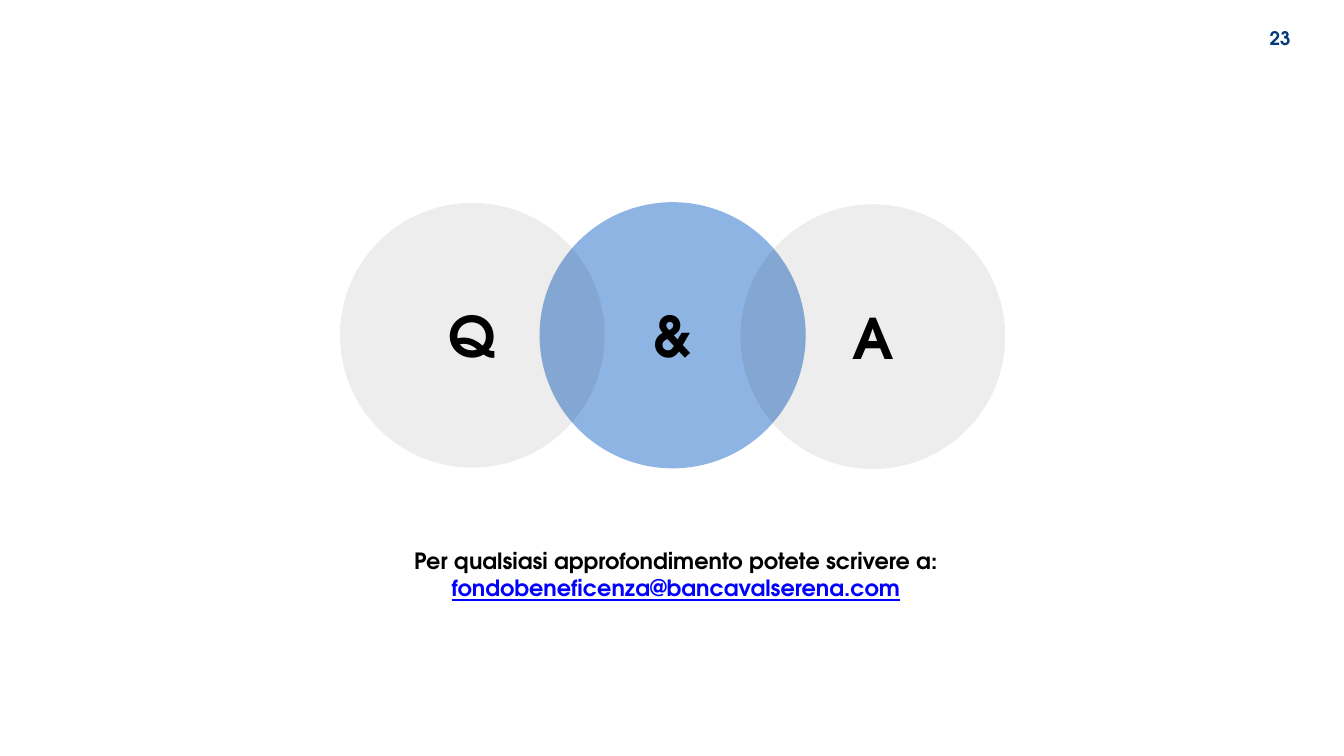
from lxml.etree import SubElement
from pptx import Presentation
from pptx.dml.color import RGBColor
from pptx.enum.shapes import MSO_SHAPE
from pptx.enum.text import MSO_ANCHOR, PP_ALIGN
from pptx.oxml.ns import qn
from pptx.util import Inches, Pt

FONT = "TeX Gyre Adventor"
BLACK = RGBColor(0, 0, 0)
NAVY = RGBColor(0x00, 0x3A, 0x79)
SKY = RGBColor(0x8E, 0xB4, 0xE3)
LINK = RGBColor(0x00, 0x00, 0xFF)

WIDE = 10
HIGH = WIDE * 9 / 16
SIZE, STEP = 1.97, 1.49  # circle diameter, distance between centres
LEFT, TOP = 2.53, 1.51

NUMBER = "23"
# column, letter, drop, fill, opacity in percent; back to front
CIRCLES = [
    (1, "&", 0, SKY, 100),
    (0, "Q", 0, BLACK, 7),
    (2, "A", 0.01, BLACK, 7),
]
PROMPT = "Per qualsiasi approfondimento potete scrivere a: "
EMAIL = "fondobeneficenza@bancavalserena.com"


def style(para, size, color, align):
    para.alignment = align
    font = para.font
    font.name, font.size, font.bold = FONT, Pt(size), True
    if color is not None:
        font.color.rgb = color


def add_box(slide, *place):
    frame = slide.shapes.add_textbox(*map(Inches, place)).text_frame
    frame.word_wrap = True
    return frame.paragraphs[0]


def add_circle(slide, col, letter, drop, color, alpha):
    place = LEFT + col * STEP, TOP + drop, SIZE, SIZE
    disc = slide.shapes.add_shape(MSO_SHAPE.OVAL, *map(Inches, place))
    disc.shadow.inherit = False
    disc.fill.solid()
    disc.fill.fore_color.rgb = color
    if alpha < 100:
        tone = disc.element.spPr.find(qn("a:solidFill"))[0]
        SubElement(tone, qn("a:alpha"), val=str(alpha * 1000))
        disc.line.fill.background()
    else:
        disc.line.color.rgb = color
        disc.line.width = Pt(0.75)
    frame = disc.text_frame
    frame.vertical_anchor = MSO_ANCHOR.MIDDLE
    frame.margin_left = frame.margin_right = Inches(0.07)
    frame.margin_top = frame.margin_bottom = Inches(0.07)
    para = frame.paragraphs[0]
    para.text = letter
    style(para, 30, BLACK, PP_ALIGN.CENTER)


def main():
    deck = Presentation()
    deck.slide_width, deck.slide_height = Inches(WIDE), Inches(HIGH)
    slide = deck.slides.add_slide(deck.slide_layouts[6])

    para = add_box(slide, 9.25, 0.15, 0.45, 0.3)
    para.text = NUMBER
    style(para, 10, NAVY, PP_ALIGN.RIGHT)

    for circle in CIRCLES:
        add_circle(slide, *circle)

    para = add_box(slide, 2.59, 4.02, 4.88, 0.5)
    style(para, 12, None, PP_ALIGN.CENTER)
    for text, color in ((PROMPT, BLACK), (EMAIL, LINK)):
        run = para.add_run()
        run.text = text
        run.font.color.rgb = color
    run.font.underline = True

    deck.save("out.pptx")


if __name__ == "__main__":
    main()
